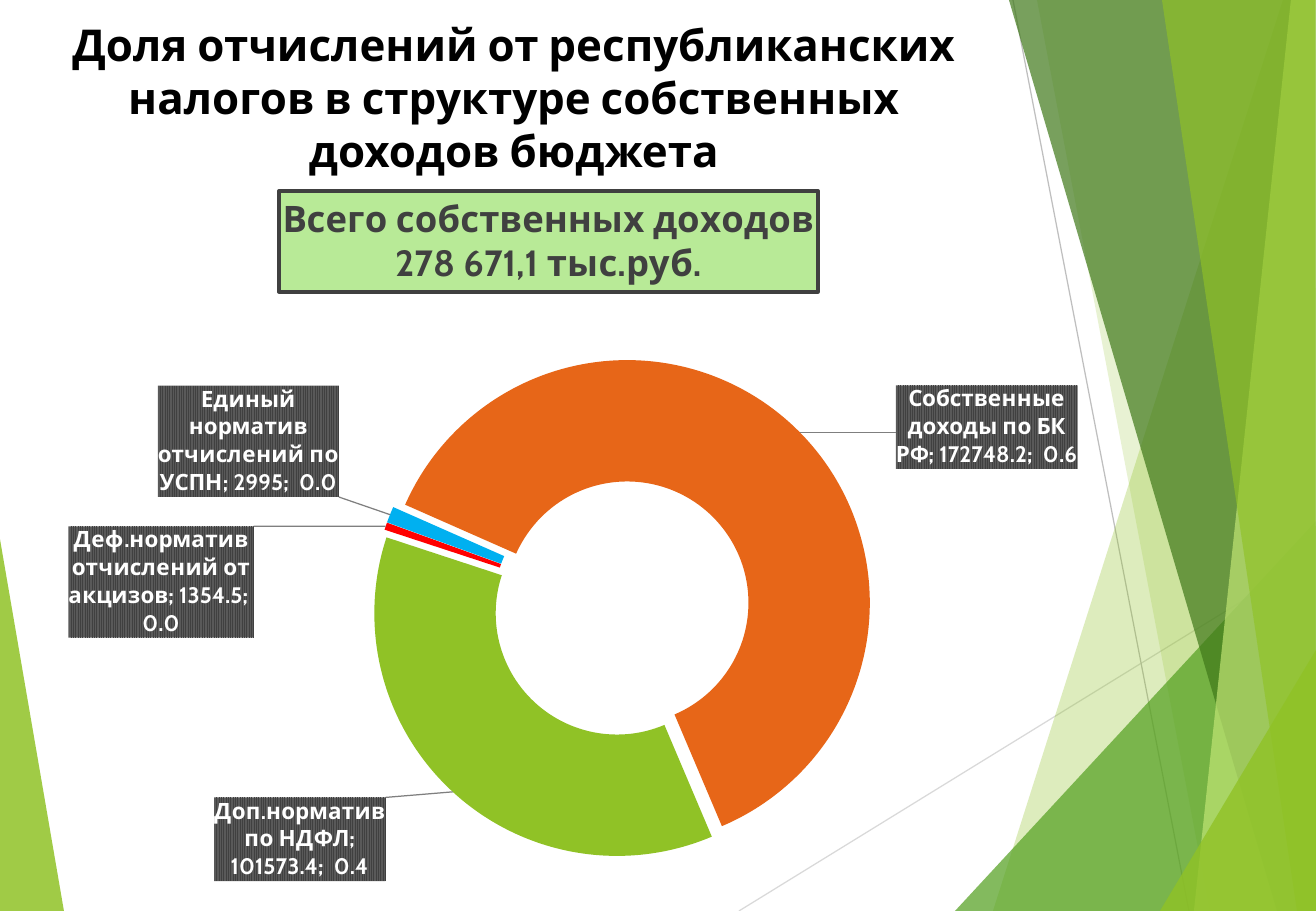
from pptx import Presentation
from pptx.chart.data import CategoryChartData
from pptx.dml.color import RGBColor
from pptx.enum.chart import XL_CHART_TYPE as ChartType
from pptx.enum.shapes import MSO_CONNECTOR as Connector
from pptx.enum.text import MSO_ANCHOR as Anchor, PP_ALIGN as Align
from pptx.oxml import parse_xml
from pptx.oxml.ns import qn
from pptx.util import Emu, Pt

PX = 7526
WIDTH, HEIGHT = 1316, 911
FONT = "Cabin"
BLACK = RGBColor(0x00, 0x00, 0x00)
DARK = RGBColor(0x40, 0x40, 0x40)
PALE_GREEN = RGBColor(0xB8, 0xEA, 0x97)
LIME = RGBColor(0x90, 0xC2, 0x26)
GREEN = RGBColor(0x54, 0xA0, 0x21)
FOREST = RGBColor(0x3F, 0x78, 0x19)
LIGHT_LIME = RGBColor(0xC0, 0xE4, 0x74)
RED = RGBColor(0xFF, 0x00, 0x00)
BLUE = RGBColor(0x00, 0xB0, 0xF0)
ORANGE = RGBColor(0xE7, 0x66, 0x18)
LINE_GREY = RGBColor(0xD9, 0xD9, 0xD9)
MID_GREY = RGBColor(0xBF, 0xBF, 0xBF)
NAMESPACES = ('xmlns:c="http://schemas.openxmlformats.org/drawingml/2006/chart" '
              'xmlns:a="http://schemas.openxmlformats.org/drawingml/2006/main"')

LINES = [((739, 911), (1317, 555), LINE_GREY), ((1013, 0), (1189, 911), MID_GREY)]
FACETS = [
    ([(0, 539), (64, 911), (0, 911)], LIME, 85),
    ([(1283, 0), (993, 911), (1316, 911), (1316, 0)], LIME, 30),
    ([(1037, 0), (1210, 911), (1316, 911), (1316, 0)], LIME, 20),
    ([(955, 911), (1316, 521), (1316, 911)], GREEN, 72),
    ([(1009, 0), (1277, 911), (1316, 911), (1316, 0)], FOREST, 70),
    ([(1291, 0), (1194, 911), (1316, 911), (1316, 0)], LIGHT_LIME, 70),
    ([(1162, 0), (1297, 911), (1316, 911), (1315, 0)], LIME, 65),
    ([(1160, 911), (1316, 650), (1316, 911)], LIME, 80),
]
SHARES = [
    ("Доп.норматив по НДФЛ", 101573.4, LIME, (-194, 92)),
    ("Деф.норматив отчислений от акцизов", 1354.5, RED, (-282, 36)),
    ("Единый норматив отчислений по УСПН", 2995.0, BLUE, (-198, -96)),
    ("Собственные доходы по БК РФ", 172748.2, ORANGE, (230, -48)),
]


def px(*lengths):
    """Turn pixel lengths into EMU."""
    return [Emu(length * PX) for length in lengths]


def set_format(target, values):
    """Set each attribute of the target from a dict."""
    for name, value in values.items():
        setattr(target, name, value)


def set_font(font, size, color, bold=True):
    """Give a font the slide's typeface, a size and a colour."""
    set_format(font, {"name": FONT, "size": Pt(size), "bold": bold})
    font.color.rgb = color


def add_backdrop(slide):
    """Draw the thin lines and translucent facets at the slide's edges."""
    for start, end, color in LINES:
        line = slide.shapes.add_connector(Connector.STRAIGHT, *px(*start, *end))
        line.line.color.rgb = color
        line.line.width = Pt(0.75)
        line._element.spPr.append(parse_xml(f"<a:effectLst {NAMESPACES}/>"))
    for points, color, opacity in FACETS:
        builder = slide.shapes.build_freeform(*points[0], scale=PX)
        builder.add_line_segments(points[1:], close=True)
        facet = builder.convert_to_shape()
        facet.shadow.inherit = False
        facet.line.fill.background()
        facet.fill.solid()
        facet.fill.fore_color.rgb = color
        facet._element.spPr.find(f".//{qn('a:srgbClr')}").append(
            parse_xml(f'<a:alpha {NAMESPACES} val="{opacity * 1000}"/>'))


def add_title(slide, box):
    """Write the slide's heading in the box."""
    frame = slide.shapes.add_textbox(*px(*box)).text_frame
    set_format(frame, {"word_wrap": True, "vertical_anchor": Anchor.TOP})
    paragraph = frame.paragraphs[0]
    paragraph.alignment = Align.CENTER
    run = paragraph.add_run()
    run.text = "Доля отчислений от республиканских налогов в структуре собственных доходов бюджета"
    set_font(run.font, 26, BLACK)


def layout_xml(box, parts, target=""):
    """Describe a manual layout with each part as a fraction of the chart box."""
    sizes = (box[2], box[3]) * 2
    fields = "".join(f'<c:{name} val="{part / size:.4f}"/>'
                     for name, part, size in zip("xywh", parts, sizes))
    modes = '<c:xMode val="edge"/><c:yMode val="edge"/>' if target else ""
    inner = '<c:layoutTarget val="inner"/>' if target == "inner" else ""
    return f"<c:layout {NAMESPACES}><c:manualLayout>{inner}{modes}{fields}</c:manualLayout></c:layout>"


def place(parent, index, layout):
    """Replace the layout of a chart part."""
    for old in parent.findall(qn("c:layout")):
        parent.remove(old)
    parent.insert(index, parse_xml(layout))


def labels_xml(box):
    """Describe the patterned labels and their shifts from the ring."""
    style = f"""<c:numFmt formatCode="#\\ ##0.0" sourceLinked="0"/>
      <c:spPr><a:pattFill prst="narVert"><a:fgClr><a:srgbClr val="404040"/></a:fgClr>
      <a:bgClr><a:srgbClr val="595959"/></a:bgClr></a:pattFill><a:ln><a:noFill/></a:ln></c:spPr>
      <c:txPr><a:bodyPr/><a:lstStyle/><a:p><a:pPr><a:defRPr sz="1330" b="1">
      <a:solidFill><a:srgbClr val="FFFFFF"/></a:solidFill><a:latin typeface="{FONT}"/>
      </a:defRPr></a:pPr><a:endParaRPr lang="ru-RU"/></a:p></c:txPr>
      <c:showLegendKey val="0"/><c:showVal val="1"/><c:showCatName val="1"/>
      <c:showSerName val="0"/><c:showPercent val="1"/><c:showBubbleSize val="0"/>
      <c:separator>; </c:separator>"""
    labels = "".join(f'<c:dLbl><c:idx val="{index}"/>{layout_xml(box, shift)}{style}</c:dLbl>'
                     for index, (_, _, _, shift) in enumerate(SHARES))
    return f"""<c:dLbls {NAMESPACES}>{labels}{style}<c:showLeaderLines val="1"/>
      <c:leaderLines><c:spPr><a:ln w="9525"><a:solidFill><a:srgbClr val="7F7F7F"/>
      </a:solidFill></a:ln></c:spPr></c:leaderLines></c:dLbls>"""


def add_income_chart(slide, box):
    """Draw the ring of income shares with its boxed total."""
    data = CategoryChartData()
    data.categories = [name for name, *_ in SHARES]
    data.add_series("Series 1", [value for _, value, *_ in SHARES])
    chart = slide.shapes.add_chart(ChartType.DOUGHNUT, *px(*box), data).chart
    set_font(chart.font, 10, BLACK, False)
    set_format(chart, {"has_legend": False, "has_title": True})

    title = chart.chart_title
    title.include_in_layout = False
    title.text_frame.text = "Всего собственных доходов\n278 671,1 тыс.руб."
    for paragraph in title.text_frame.paragraphs:
        paragraph.alignment = Align.CENTER
        set_font(paragraph.runs[0].font, 21.6, DARK)
    title.format.fill.solid()
    title.format.fill.fore_color.rgb = PALE_GREEN
    title.format.line.color.rgb = DARK
    title.format.line.width = Pt(2.25)
    place(title._element, 1, layout_xml(box, (252, 5), "edge"))

    plot = chart.plots[0]
    plot.vary_by_categories = True
    series = plot.series[0]
    for index, (_, _, color, _) in enumerate(SHARES):
        point = series.points[index].format
        point.fill.solid()
        point.fill.fore_color.rgb = color
        point.line.fill.background()
    element = series._element
    element.find(qn("c:tx")).addnext(parse_xml(f'<c:explosion {NAMESPACES} val="6"/>'))
    element.find(qn("c:cat")).addprevious(parse_xml(labels_xml(box)))
    ring = plot._element
    ring.find(qn("c:firstSliceAng")).set("val", "157")
    ring.find(qn("c:holeSize")).set("val", "40")
    place(ring.getparent(), 0, layout_xml(box, (345, 172, 500, 500), "inner"))


def main():
    """Build and save the slide."""
    presentation = Presentation()
    presentation.slide_width, presentation.slide_height = px(WIDTH, HEIGHT)
    slide = presentation.slides.add_slide(presentation.slide_layouts[6])
    add_backdrop(slide)
    add_title(slide, (27, 12, 974, 83))
    add_income_chart(slide, (27, 186, 1176, 714))
    presentation.save("out.pptx")


if __name__ == "__main__":
    main()
